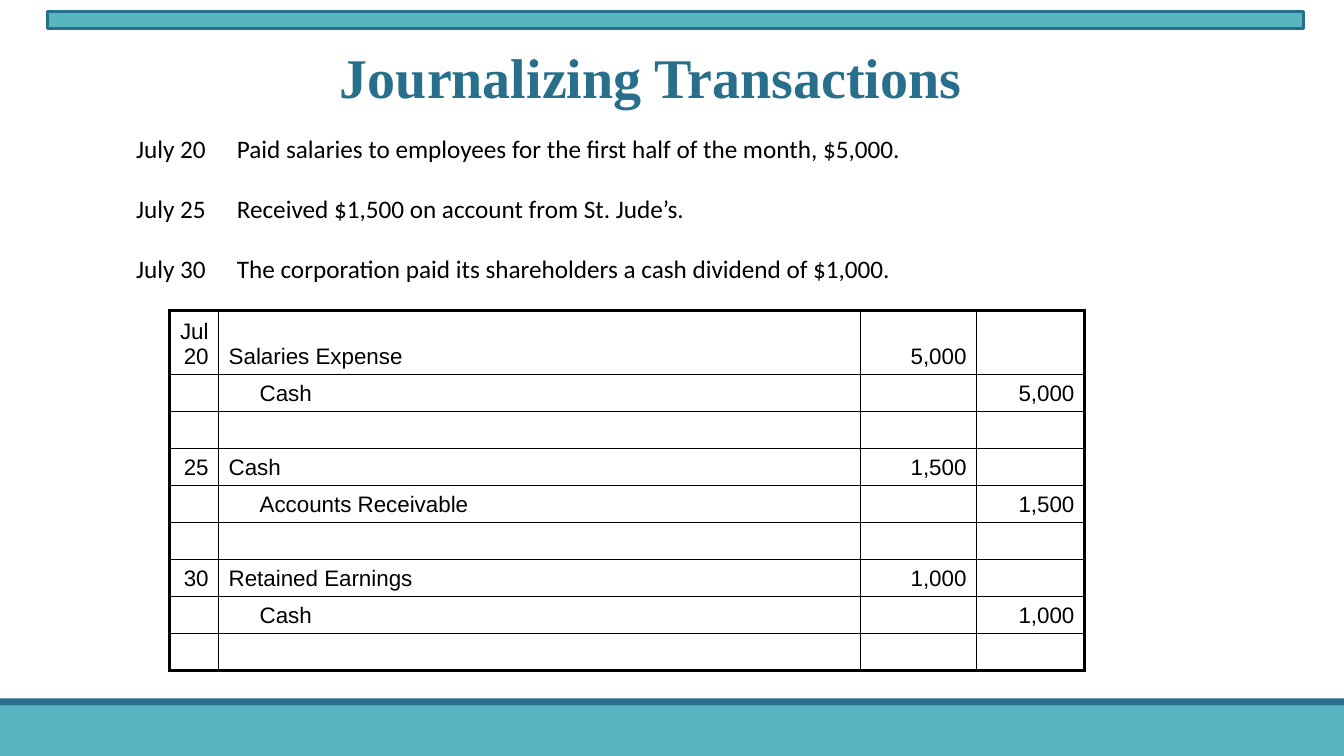
import dataclasses

import pptx
import pptx.dml.color
import pptx.enum.shapes
import pptx.enum.text
import pptx.oxml
import pptx.oxml.ns
import pptx.util

Cm = pptx.util.Cm
Pt = pptx.util.Pt
ALIGN = pptx.enum.text.PP_ALIGN
ANCHOR = pptx.enum.text.MSO_ANCHOR


@dataclasses.dataclass(frozen=True)
class Theme:
    teal: str = "58B6C0"
    blue: str = "276F8B"
    ink: str = "000000"
    title_font: str = "Times New Roman"
    body_font: str = "Calibri"
    table_font: str = "Arial"
    title_size: float = 40
    body_size: float = 18
    table_size: float = 16
    thin: float = 1
    thick: float = 2.25


THEME = Theme()
TRANSACTIONS = [
    ("July 20", "Paid salaries to employees for the first half of the month, $5,000."),
    ("July 25", "Received $1,500 on account from St. Jude’s."),
    ("July 30", "The corporation paid its shareholders a cash dividend of $1,000."),
]
ENTRIES = [
    ("Jul\v20", "Salaries Expense", "Cash", "5,000"),
    ("25", "Cash", "Accounts Receivable", "1,500"),
    ("30", "Retained Earnings", "Cash", "1,000"),
]
COLUMNS = [1.24, 16.18, 2.92, 2.72]
FIRST_ROW, ROW = 1.62, 0.93


def rgb(color):
    return pptx.dml.color.RGBColor.from_string(color)


def add_run(p, text, font, size, color, bold=False):
    for i, line in enumerate(text.split("\v")):
        if i:
            p.add_line_break()
        r = p.add_run()
        r.text = line
        r.font.name = font
        r.font.size = Pt(size)
        r.font.bold = bold
        r.font.color.rgb = rgb(color)


def add_bar(s, x, y, w, h, fill, line=None):
    sp = s.shapes.add_shape(
        pptx.enum.shapes.MSO_SHAPE.RECTANGLE, Cm(x), Cm(y), Cm(w), Cm(h))
    sp.shadow.inherit = False
    sp.fill.solid()
    sp.fill.fore_color.rgb = rgb(fill)
    if line:
        sp.line.color.rgb = rgb(line)
        sp.line.width = Pt(THEME.thick)
    else:
        sp.line.fill.background()


def add_frame(s, w, h):
    edge = 0.18
    footer = 1.27
    add_bar(s, 0, h - footer, w, footer, THEME.teal)
    add_bar(s, 0, h - footer - edge, w, edge, THEME.blue)
    add_bar(s, 1.19, 0.3, w - 2.2, 0.41, THEME.teal, THEME.blue)


def add_title(s, x, y, w, h):
    tf = s.shapes.add_textbox(Cm(x), Cm(y), Cm(w), Cm(h)).text_frame
    tf.word_wrap = False
    p = tf.paragraphs[0]
    p.alignment = ALIGN.CENTER
    add_run(p, "Journalizing Transactions", THEME.title_font,
            THEME.title_size, THEME.blue, True)


def add_transactions(s, x, y, w, h):
    tf = s.shapes.add_textbox(Cm(x), Cm(y), Cm(w), Cm(h)).text_frame
    tf.word_wrap = True
    for i, (date, event) in enumerate(TRANSACTIONS):
        p = tf.add_paragraph() if i else tf.paragraphs[0]
        if i:
            p.space_before = Pt(21.5)
        add_run(p, f"{date}\t{event}", THEME.body_font, THEME.body_size, THEME.ink)


def set_borders(cell, widths):
    tcPr = cell._tc.get_or_add_tcPr()
    for i, (side, width) in enumerate(zip("LRTB", widths)):
        tcPr.insert(i, pptx.oxml.parse_xml(
            f'<a:ln{side} {pptx.oxml.ns.nsdecls("a")} w="{int(Pt(width))}">'
            f'<a:solidFill><a:srgbClr val="{THEME.ink}"/></a:solidFill></a:ln{side}>'))


def fill_cell(cell, text, right, indent):
    cell.fill.background()
    cell.vertical_anchor = ANCHOR.BOTTOM
    p = cell.text_frame.paragraphs[0]
    p.alignment = ALIGN.RIGHT if right else ALIGN.LEFT
    if indent:
        p._p.get_or_add_pPr().set("marL", str(int(Cm(0.78))))
    if text:
        add_run(p, text, THEME.table_font, THEME.table_size, THEME.ink)
    else:
        p._p.append(pptx.oxml.parse_xml(
            f'<a:endParaRPr {pptx.oxml.ns.nsdecls("a")} sz="{THEME.table_size * 100}"/>'))


def add_journal(s, x, y):
    rows = []
    for date, debit, credit, amount in ENTRIES:
        rows += [(date, debit, amount, ""), ("", credit, "", amount), ("",) * 4]
    heights = [FIRST_ROW] + [ROW] * (len(rows) - 1)
    table = s.shapes.add_table(
        len(rows), len(COLUMNS), Cm(x), Cm(y),
        Cm(sum(COLUMNS)), Cm(sum(heights))).table
    table.first_row = table.horz_banding = False
    for column, width in zip(table.columns, COLUMNS):
        column.width = Cm(width)
    for row, height in zip(table.rows, heights):
        row.height = Cm(height)
    for i, row in enumerate(rows):
        for j, text in enumerate(row):
            cell = table.cell(i, j)
            fill_cell(cell, text, j != 1, j == 1 and i % 3 == 1)
            outer = (j == 0, j == len(COLUMNS) - 1, i == 0, i == len(rows) - 1)
            set_borders(cell, [THEME.thick if o else THEME.thin for o in outer])


def main():
    prs = pptx.Presentation()
    w, h = 33.87, 19.05
    prs.slide_width, prs.slide_height = Cm(w), Cm(h)
    s = prs.slides.add_slide(prs.slide_layouts[6])
    add_frame(s, w, h)
    add_title(s, 8.23, 0.95, 16.33, 1.96)
    add_transactions(s, 3.18, 3.23, 30.69, 4.11)
    add_journal(s, 4.27, 7.82)
    prs.save("out.pptx")


if __name__ == "__main__":
    main()
